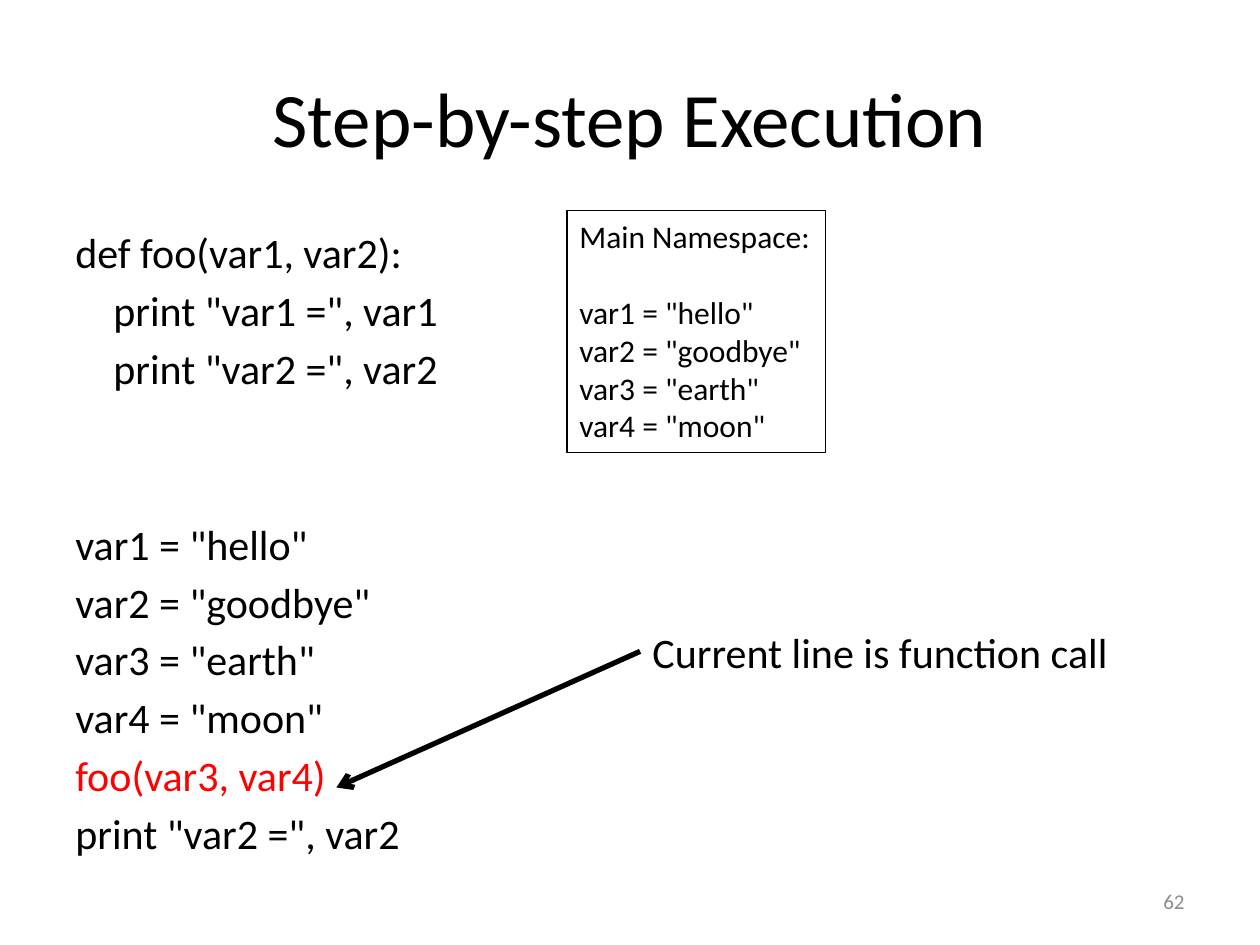
"""Build the slide that steps through a Python function call."""
from dataclasses import dataclass

from lxml.etree import SubElement
from pptx import Presentation
from pptx.dml.color import RGBColor
from pptx.enum.shapes import MSO_CONNECTOR as Connector
from pptx.enum.text import MSO_ANCHOR as Anchor, PP_ALIGN as Align
from pptx.oxml.ns import qn
from pptx.util import Inches, Pt

BLACK = RGBColor(0, 0, 0)
RED = RGBColor(255, 0, 0)
GRAY = RGBColor(0x8C, 0x8C, 0x8C)
FONT = "Calibri"
LINE_HEIGHT = 1.22
ASSIGNMENTS = ['var1 = "hello"', 'var2 = "goodbye"', 'var3 = "earth"', 'var4 = "moon"']
FUNCTION = ["def foo(var1, var2):", '    print "var1 =", var1', '    print "var2 =", var2']
CALL = "foo(var3, var4)"


@dataclass
class TextBlock:
    left: float
    top: float
    width: float
    height: float
    lines: list[str]
    size: float
    color: RGBColor = BLACK
    align: Align = Align.LEFT
    anchor: Anchor = Anchor.TOP
    spacing: float = 0
    gap_before: str = ""
    gap_lines: int = 0
    current: str = ""


def fill_text(shape, block: TextBlock) -> None:
    shape.left, shape.top = Inches(block.left), Inches(block.top)
    shape.width, shape.height = Inches(block.width), Inches(block.height)
    frame = shape.text_frame
    frame.word_wrap = True
    frame.vertical_anchor = block.anchor
    frame.text = "\n".join(block.lines)
    pitch = block.size * LINE_HEIGHT + block.spacing
    for index, para in enumerate(frame.paragraphs):
        para.alignment = block.align
        if index:
            skipped = block.gap_lines if para.text == block.gap_before else 0
            para.space_before = Pt(round(block.spacing + skipped * pitch, 1))
        for span in para.runs:
            span.font.name = FONT
            span.font.size = Pt(block.size)
            span.font.color.rgb = RED if span.text == block.current else block.color


def add_text(page, block: TextBlock):
    box = page.shapes.add_textbox(0, 0, 0, 0)
    fill_text(box, block)
    return box


def add_pointer(page, label, end_left: float, end_top: float) -> None:
    arrow = page.shapes.add_connector(
        Connector.STRAIGHT, 0, 0, Inches(end_left), Inches(end_top)
    )
    arrow.begin_connect(label, 1)
    arrow.line.color.rgb = BLACK
    arrow.line.width = Pt(3)
    SubElement(arrow.line._get_or_add_ln(), qn("a:tailEnd"), type="arrow")
    SubElement(arrow._element.spPr, qn("a:effectLst"))


def main() -> None:
    deck = Presentation()
    deck.slide_width, deck.slide_height = Inches(10), Inches(7.5)
    page = deck.slides.add_slide(deck.slide_layouts[5])

    fill_text(page.shapes.title, TextBlock(
        0.5, 0.3, 9, 1.25, ["Step-by-step Execution"], 44,
        align=Align.CENTER, anchor=Anchor.MIDDLE))
    add_text(page, TextBlock(
        0.5, 1.75, 9, 4.95, FUNCTION + ASSIGNMENTS + [CALL, 'print "var2 =", var2'], 24,
        spacing=4.3, gap_before=ASSIGNMENTS[0], gap_lines=2, current=CALL))
    add_text(page, TextBlock(
        7.17, 6.95, 2.33, 0.4, ["62"], 12, GRAY, Align.RIGHT, Anchor.MIDDLE))
    label = add_text(page, TextBlock(
        5.08, 4.92, 3.85, 0.5, ["Current line is function call"], 24))
    namespace = add_text(page, TextBlock(
        4.5, 1.67, 2.05, 1.92, ["Main Namespace:"] + ASSIGNMENTS, 18,
        gap_before=ASSIGNMENTS[0], gap_lines=1))
    namespace.line.color.rgb = BLACK
    namespace.line.width = Pt(0.75)
    add_pointer(page, label, 2.67, 6.25)

    deck.save("out.pptx")


if __name__ == "__main__":
    main()
